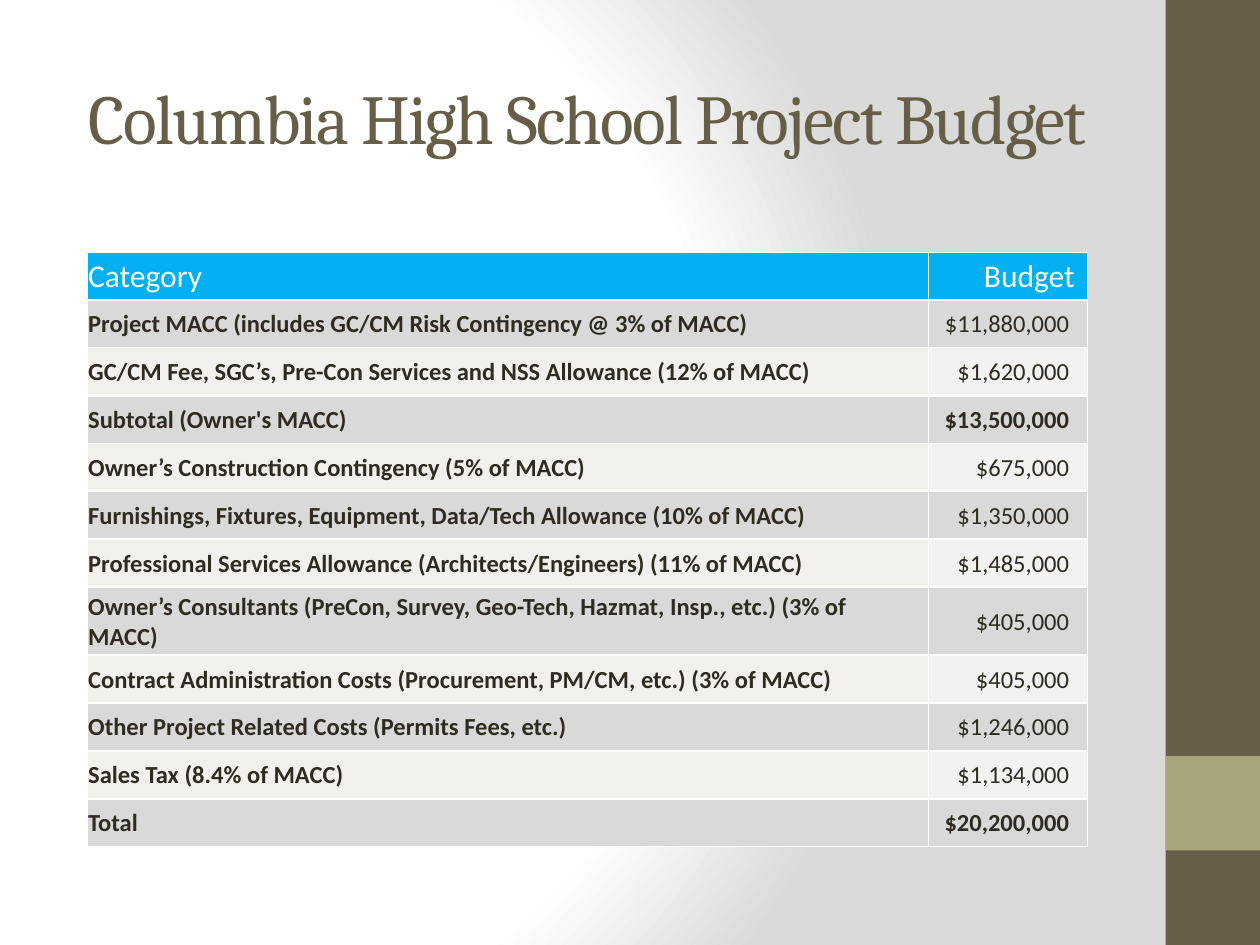
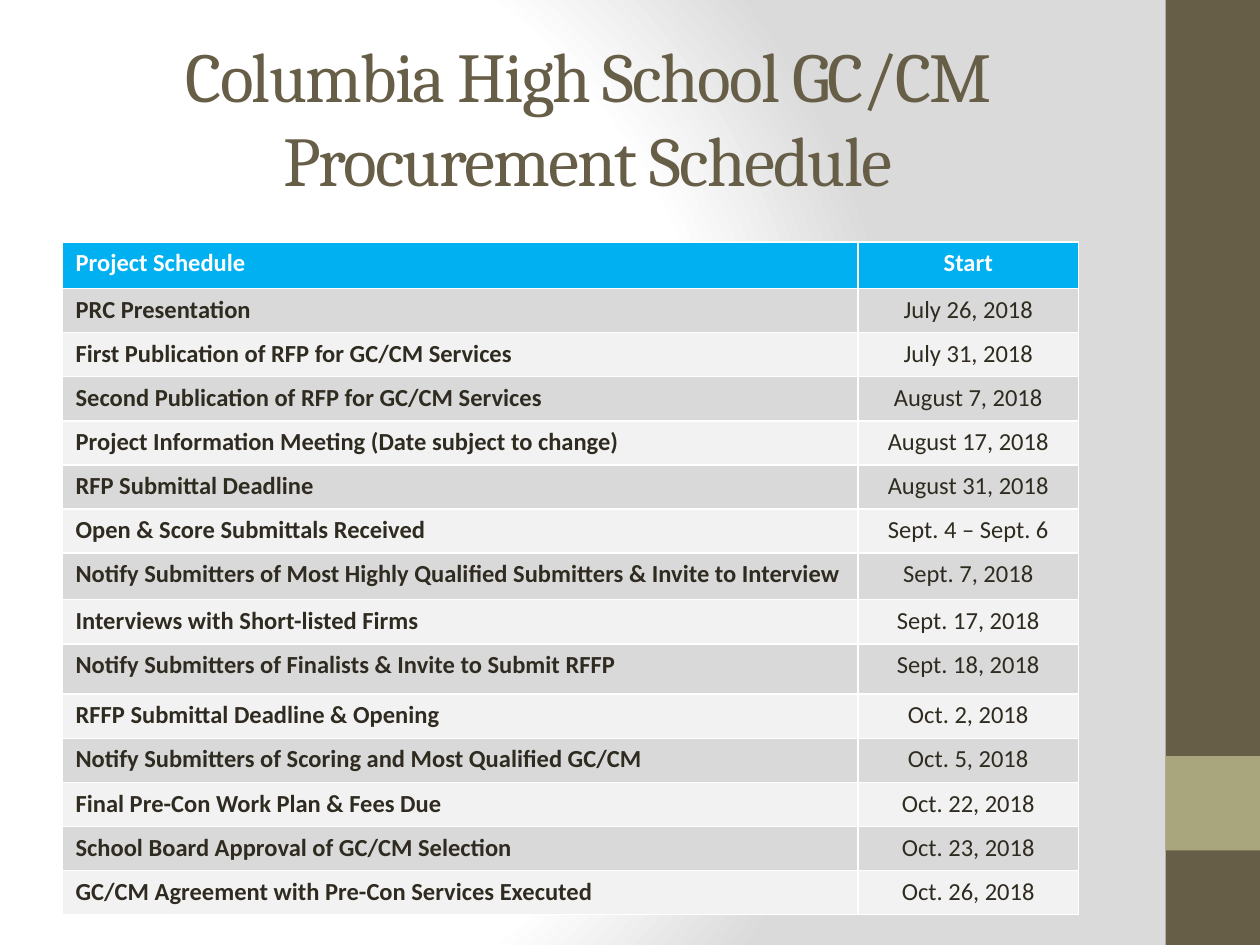
from lxml.etree import SubElement
from pptx import Presentation
from pptx.dml.color import RGBColor
from pptx.enum.shapes import MSO_SHAPE
from pptx.enum.text import MSO_ANCHOR, MSO_AUTO_SIZE, PP_ALIGN
from pptx.oxml import parse_xml
from pptx.oxml.ns import nsdecls, qn
from pptx.util import Inches, Pt

# Shared colours and fonts
BROWN, SAGE, INK = "675E47", "A9A57C", "2F2B20"
WHITE, SKY, GREY, PALE, CREAM = "FFFFFF", "00B0F0", "D9D9D9", "F2F2F2", "F1F0EC"
HEAD_FONT, BODY_FONT = "Cambria", "Calibri"

COSTS = [
    ("Project MACC (includes GC/CM Risk Contingency @ 3% of MACC)", 11880000),
    ("GC/CM Fee, SGC’s, Pre-Con Services and NSS Allowance (12% of MACC)", 1620000),
    ("Subtotal (Owner's MACC)", 13500000),
    ("Owner’s Construction Contingency (5% of MACC)", 675000),
    ("Furnishings, Fixtures, Equipment, Data/Tech Allowance (10% of MACC)", 1350000),
    ("Professional Services Allowance (Architects/Engineers) (11% of MACC)", 1485000),
    ("Owner’s Consultants (PreCon, Survey, Geo-Tech, Hazmat, Insp., etc.) (3% of MACC)", 405000),
    ("Contract Administration Costs (Procurement, PM/CM, etc.) (3% of MACC)", 405000),
    ("Other Project Related Costs (Permits Fees, etc.)", 1246000),
    ("Sales Tax (8.4% of MACC)", 1134000),
    ("Total", 20200000),
]
SUMS = ("Subtotal (Owner's MACC)", "Total")

DATES = [
    ("Project Schedule", "Start"),
    ("PRC Presentation", "July 26, 2018"),
    ("First Publication of RFP for GC/CM Services", "July 31, 2018"),
    ("Second Publication of RFP for GC/CM Services", "August 7, 2018"),
    ("Project Information Meeting (Date subject to change)", "August 17, 2018"),
    ("RFP Submittal Deadline", "August 31, 2018"),
    ("Open & Score Submittals Received", "Sept. 4 – Sept. 6"),
    ("Notify Submitters of Most Highly Qualified Submitters & Invite to Interview",
     "Sept. 7, 2018"),
    ("Interviews with Short-listed Firms", "Sept. 17, 2018"),
    ("Notify Submitters of Finalists & Invite to Submit RFFP", "Sept. 18, 2018"),
    ("RFFP Submittal Deadline & Opening", "Oct. 2, 2018"),
    ("Notify Submitters of Scoring and Most Qualified GC/CM", "Oct. 5, 2018"),
    ("Final Pre-Con Work Plan & Fees Due", "Oct. 22, 2018"),
    ("School Board Approval of GC/CM Selection", "Oct. 23, 2018"),
    ("GC/CM Agreement with Pre-Con Services Executed", "Oct. 26, 2018"),
]


def paint(color, value):
    """Set a fill's or font's colour from a hex string."""
    color.rgb = RGBColor.from_string(value)


def set_back(master):
    """Give the master a round gradient that all slides inherit."""
    master.background.fill.solid()
    holder = master.element.cSld.bg.bgPr
    stops = "".join(
        f'<a:gs pos="{pos * 1000}"><a:srgbClr val="{hue}"/></a:gs>'
        for pos, hue in ((0, WHITE), (75, WHITE), (100, "DADADA")))
    holder.replace(holder[0], parse_xml(
        f'<a:gradFill {nsdecls("a")} rotWithShape="1"><a:gsLst>{stops}</a:gsLst>'
        '<a:path path="circle"><a:fillToRect l="20000" t="50000" r="100000" b="50000"/>'
        '</a:path></a:gradFill>'))


def add_band(slide, top, height, hue):
    band = slide.shapes.add_shape(
        MSO_SHAPE.RECTANGLE, Inches(9.25), Inches(top), Inches(0.75), Inches(height))
    band.shadow.inherit = False
    band.fill.solid()
    paint(band.fill.fore_color, hue)
    band.line.fill.background()


def set_title(slide, text):
    title = slide.shapes.title
    title.left, title.top = Inches(0.5), Inches(0.3)
    title.width, title.height = Inches(8.33), Inches(1.25)
    frame = title.text_frame
    frame.text = text
    frame.auto_size = MSO_AUTO_SIZE.NONE
    frame.vertical_anchor = MSO_ANCHOR.MIDDLE
    para = frame.paragraphs[0]
    para.alignment = PP_ALIGN.CENTER
    para.font.size, para.font.name = Pt(40), HEAD_FONT
    paint(para.font.color, BROWN)
    para.runs[0].font._element.set("spc", "-100")


def add_page(deck, title):
    """Start a slide with its title and side bands."""
    slide = deck.slides.add_slide(deck.slide_layouts[5])
    add_band(slide, 0, 7.5, BROWN)
    add_band(slide, 6, 0.75, SAGE)
    set_title(slide, title)
    return slide


def add_grid(slide, left, top, cols, heights, rows):
    grid = slide.shapes.add_table(
        len(rows), len(cols), Inches(left), Inches(top),
        Inches(sum(cols)), Inches(sum(heights))).table
    for col, width in zip(grid.columns, cols):
        col.width = Inches(width)
    for row, height in zip(grid.rows, heights):
        row.height = Inches(height)
    for i, row in enumerate(rows):
        for j, text in enumerate(row):
            grid.cell(i, j).text = text
    return grid


def style_cell(cell, fill, hue, size, bold, align):
    cell.fill.solid()
    paint(cell.fill.fore_color, fill)
    para = cell.text_frame.paragraphs[0]
    para.alignment = align
    font = para.font
    font.name, font.size, font.bold = BODY_FONT, Pt(size), bold
    paint(font.color, hue)


def set_edges(cell, left, right, top, bottom):
    """Draw white cell borders; a width of 0 hides the line."""
    props = cell._tc.get_or_add_tcPr()
    sides = zip(("lnL", "lnR", "lnT", "lnB"), (left, right, top, bottom))
    for spot, (tag, width) in enumerate(sides):
        line = SubElement(props, qn(f"a:{tag}"), w=str(Pt(width)))
        if width:
            fill = SubElement(line, qn("a:solidFill"))
            SubElement(fill, qn("a:srgbClr"), val=WHITE)
        else:
            SubElement(line, qn("a:noFill"))
        props.insert(spot, line)


def rule_width(i):
    """Width of the budget line above row i."""
    return 0.5 if i == 0 else 1.5 if i % 2 else 1


def add_budget(slide):
    rows = [("Category", "Budget")] + [(name, f"${cost:,} ") for name, cost in COSTS]
    heights = [0.54 if "Consultants" in name else 0.38 for name, _ in rows]
    grid = add_grid(slide, 0.69, 2, (6.68, 1.26), heights, rows)
    for i, (name, _) in enumerate(rows):
        for j, align in enumerate((PP_ALIGN.LEFT, PP_ALIGN.RIGHT)):
            cell = grid.cell(i, j)
            cell.vertical_anchor = MSO_ANCHOR.MIDDLE
            cell.margin_left = cell.margin_top = Inches(0.01)
            cell.margin_right = Inches(0.1 if j else 0.2)
            cell.margin_bottom = 0
            if i == 0:
                style_cell(cell, SKY, WHITE, 18, False, align)
            else:
                fill = GREY if i % 2 else (CREAM, PALE)[j]
                style_cell(cell, fill, INK, 14, j == 0 or name in SUMS, align)
            sides = (1, 0.5) if j else (0.5, 1)
            set_edges(cell, *sides, rule_width(i), rule_width(i + 1))


def add_dates(slide):
    tall = {0: 0.37, 7: 0.37, 9: 0.4}
    heights = [tall.get(i, 0.35) for i in range(len(DATES))]
    grid = add_grid(slide, 0.5, 1.92, (6.31, 1.75), heights, DATES)
    for i in range(len(DATES)):
        for j, align in enumerate((PP_ALIGN.LEFT, PP_ALIGN.CENTER)):
            cell = grid.cell(i, j)
            if i == 0:
                style_cell(cell, SKY, WHITE, 14, True, align)
            else:
                style_cell(cell, GREY if i % 2 else PALE, INK, 14, j == 0, align)
            set_edges(cell, j, 1, 1, 1)


def main():
    deck = Presentation()
    deck.slide_width, deck.slide_height = Inches(10), Inches(7.5)
    set_back(deck.slide_master)
    add_budget(add_page(deck, "Columbia High School Project Budget"))
    add_dates(add_page(deck, "Columbia High School GC/CM Procurement Schedule"))
    deck.save("out.pptx")


if __name__ == "__main__":
    main()
